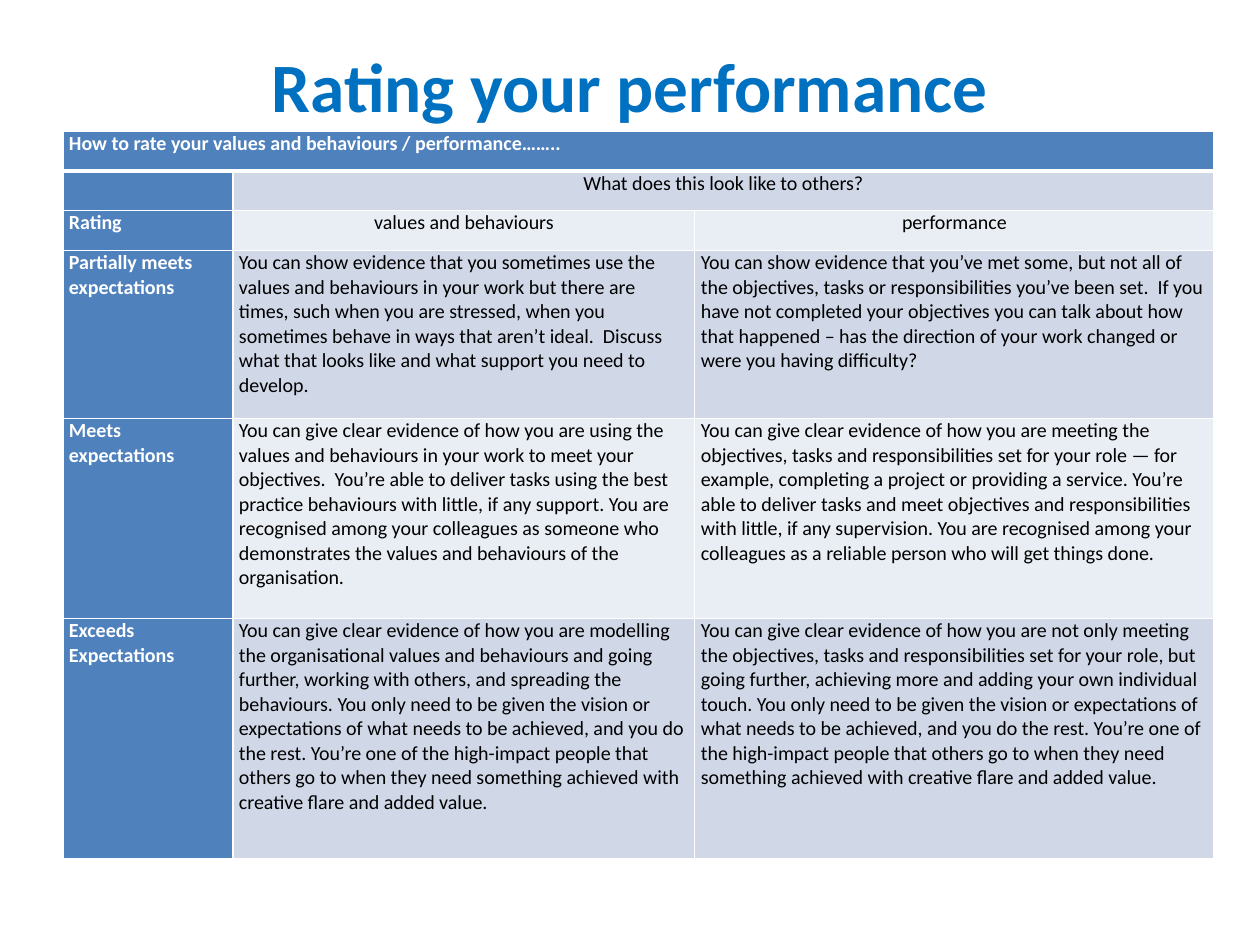
import pptx
import pptx.util
import pptx.dml.color
import pptx.enum.text
import pptx.oxml
import pptx.oxml.ns

PX = 914400 // 90
ALIGN = pptx.enum.text.PP_ALIGN
ANCHOR = pptx.enum.text.MSO_ANCHOR

BLUE, WHITE, BLACK = "4F81BD", "FFFFFF", "000000"
BANDS = ["D0D8E8", "E9EDF4"]
WIDTHS = [170, 462, 519]
HEIGHTS = [40, 40, 40, 168, 200, 240]
ROWS = [
    ["How to rate your values and behaviours / performance……..", "", ""],
    ["", "What does this look like to others?", ""],
    ["Rating", "values and behaviours", "performance"],
    ["Partially meets expectations",
     "You can show evidence that you sometimes use the values and behaviours "
     "in your work but there are times, such when you are stressed, when you "
     "sometimes behave in ways that aren’t ideal.  Discuss what that looks "
     "like and what support you need to develop.",
     "You can show evidence that you’ve met some, but not all of the "
     "objectives, tasks or responsibilities you’ve been set.  If you have not "
     "completed your objectives you can talk about how that happened – has "
     "the direction of your work changed or were you having difficulty?"],
    ["Meets expectations",
     "You can give clear evidence of how you are using the values and "
     "behaviours in your work to meet your objectives.  You’re able to "
     "deliver tasks using the best practice behaviours with little, if any "
     "support. You are recognised among your colleagues as someone who "
     "demonstrates the values and behaviours of the organisation.",
     "You can give clear evidence of how you are meeting the objectives, "
     "tasks and responsibilities set for your role — for example, completing "
     "a project or providing a service. You’re able to deliver tasks and meet "
     "objectives and responsibilities with little, if any supervision. You "
     "are recognised among your colleagues as a reliable person who will get "
     "things done."],
    ["Exceeds Expectations",
     "You can give clear evidence of how you are modelling the organisational "
     "values and behaviours and going further, working with others, and "
     "spreading the behaviours. You only need to be given the vision or "
     "expectations of what needs to be achieved, and you do the rest. You’re "
     "one of the high-impact people that others go to when they need "
     "something achieved with creative flare and added value.",
     "You can give clear evidence of how you are not only meeting the "
     "objectives, tasks and responsibilities set for your role, but going "
     "further, achieving more and adding your own individual touch. You only "
     "need to be given the vision or expectations of what needs to be "
     "achieved, and you do the rest. You’re one of the high-impact people "
     "that others go to when they need something achieved with creative flare "
     "and added value."],
]


def rgb(code):
    return pptx.dml.color.RGBColor.from_string(code)


def edge(cell, side, width):
    """Draw one white border of a cell; side is L, R, T or B."""
    line = pptx.oxml.parse_xml(
        f'<a:ln{side} {pptx.oxml.ns.nsdecls("a")} w="{pptx.util.Pt(width)}">'
        f'<a:solidFill><a:srgbClr val="{WHITE}"/></a:solidFill></a:ln{side}>')
    cell._tc.get_or_add_tcPr().append(line)


class Deck:
    """Holds the text style and the current slide."""

    def __init__(self, wide, high, face):
        self.show = pptx.Presentation()
        self.show.slide_width = wide * PX
        self.show.slide_height = high * PX
        self.face = face
        self.slide = self.show.slides.add_slide(self.show.slide_layouts[6])

    def style(self, frame, size, color, bold, align):
        para = frame.paragraphs[0]
        para.alignment = align
        for run in para.runs:
            run.font.name = self.face
            run.font.size = pptx.util.Pt(size)
            run.font.bold = bold
            run.font.color.rgb = rgb(color)
        return para

    def title(self, text, left, top, wide, high):
        box = self.slide.shapes.add_textbox(
            left * PX, top * PX, wide * PX, high * PX)
        frame = box.text_frame
        frame.word_wrap = True
        frame.vertical_anchor = ANCHOR.MIDDLE
        frame.text = text
        self.style(frame, 55.4, "0070C0", True, ALIGN.CENTER)

    def cell(self, cell, text, fill, color, bold, align):
        cell.margin_left = cell.margin_right = 6 * PX
        cell.margin_top = cell.margin_bottom = 0
        cell.fill.solid()
        cell.fill.fore_color.rgb = rgb(fill)
        if text:
            cell.text_frame.text = text
            para = self.style(cell.text_frame, 16, color, bold, align)
            para.space_after = pptx.util.Pt(6)

    def table(self, rows, left, top, widths, heights):
        grid = self.slide.shapes.add_table(
            len(rows), len(widths), left * PX, top * PX,
            sum(widths) * PX, sum(heights) * PX).table
        grid.first_row = grid.horz_banding = False
        for col, wide in zip(grid.columns, widths):
            col.width = wide * PX
        for row, high in zip(grid.rows, heights):
            row.height = high * PX
        for i, row in enumerate(rows):
            for j, text in enumerate(row):
                cell = grid.cell(i, j)
                for side in "LRTB":
                    thick = (i, side) in [(0, "B"), (1, "T")]
                    edge(cell, side, 3 if thick else 1)
                head = i == 0 or j == 0
                fill = BLUE if head else BANDS[(i - 1) % 2]
                mid = not head and i < 3
                self.cell(cell, text, fill, WHITE if head else BLACK, head,
                          ALIGN.CENTER if mid else ALIGN.LEFT)
        grid.cell(0, 0).merge(grid.cell(0, 2))
        grid.cell(1, 1).merge(grid.cell(1, 2))


def main():
    deck = Deck(1260, 945, "Calibri")
    deck.title("Rating your performance", 63, 38, 1134, 94)
    deck.table(ROWS, 63, 131, WIDTHS, HEIGHTS)
    deck.show.save("out.pptx")


if __name__ == "__main__":
    main()
